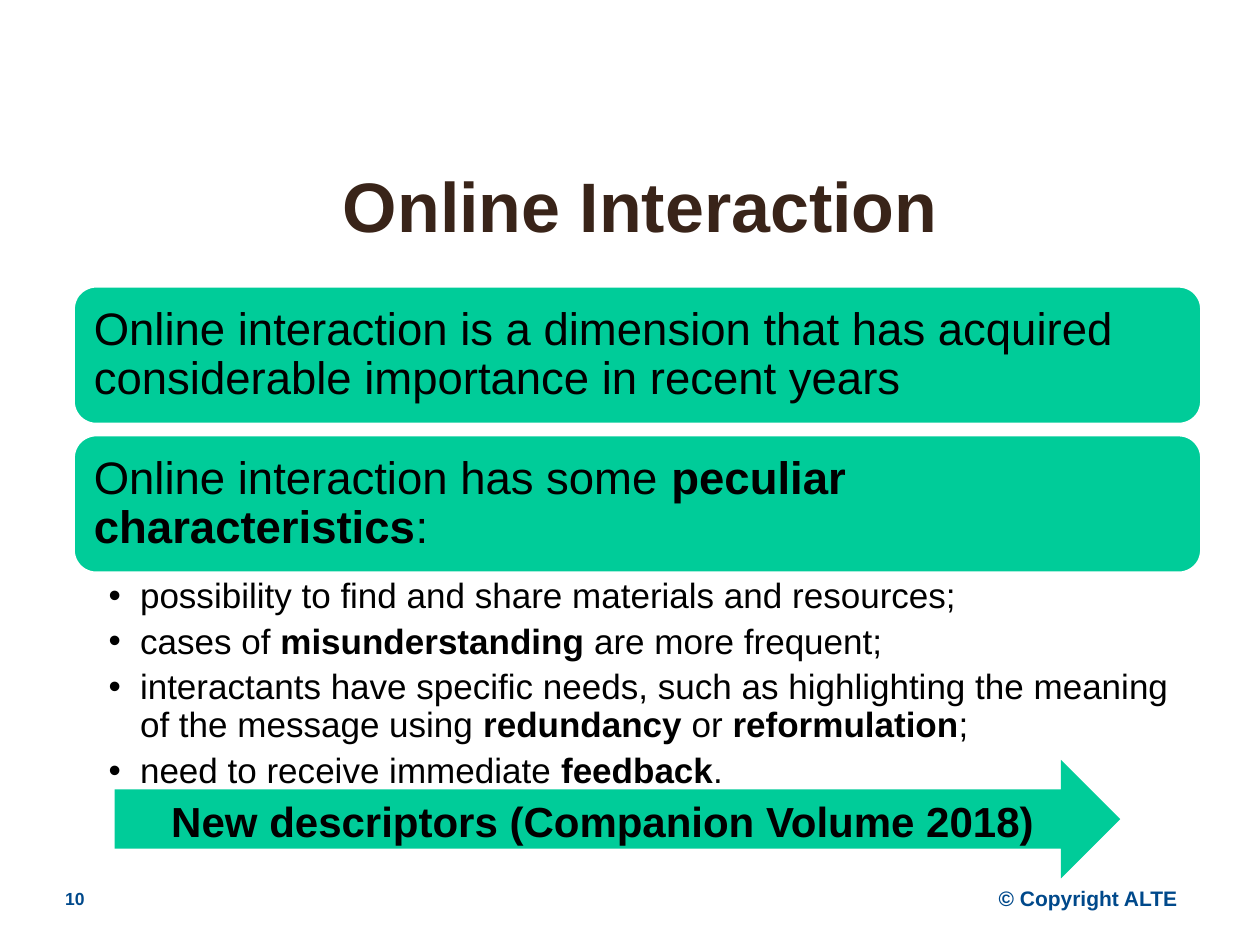
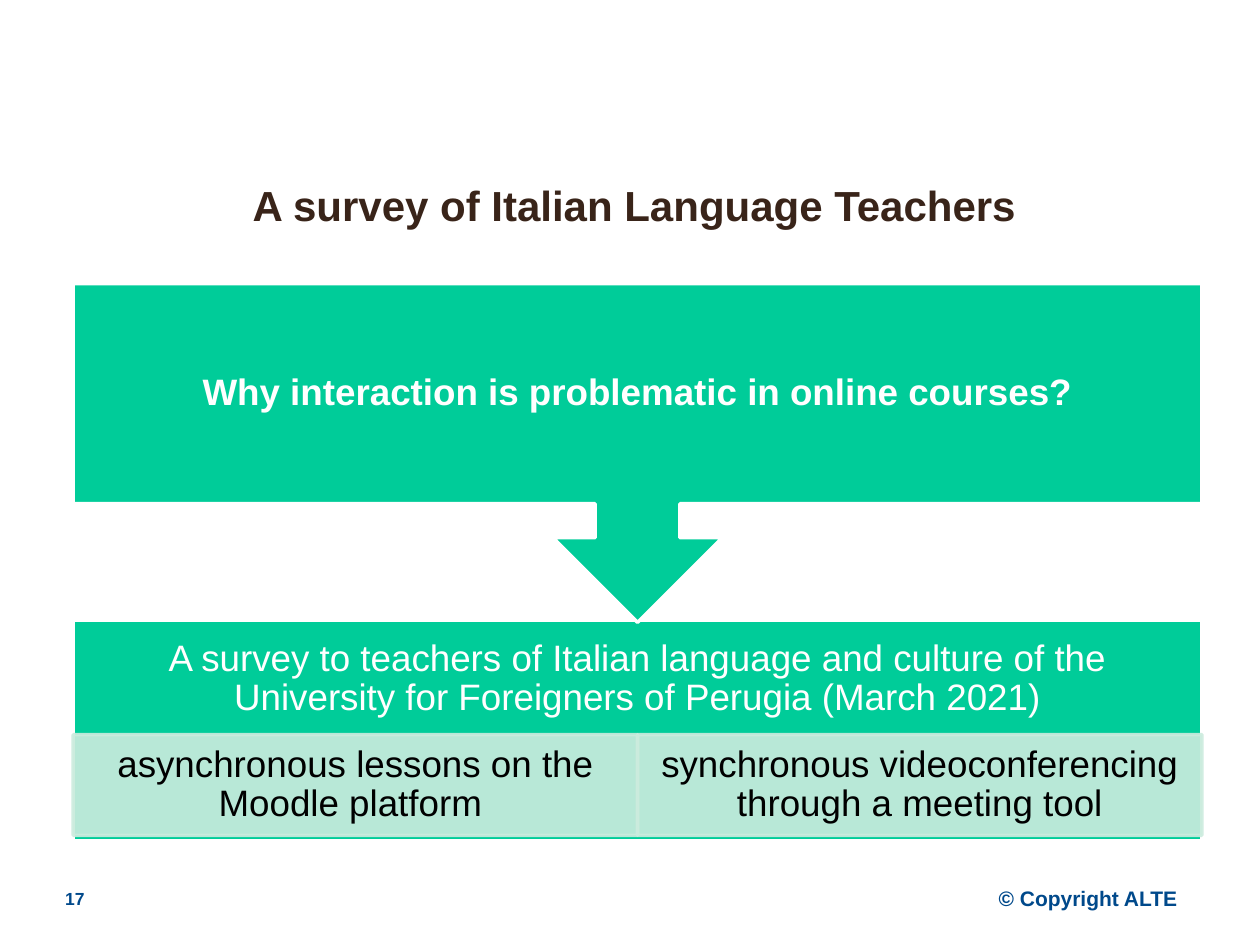
from lxml.etree import SubElement as Sub
from pptx import Presentation
from pptx.dml.color import RGBColor as Rgb
from pptx.enum.shapes import MSO_SHAPE as Kind
from pptx.enum.text import MSO_ANCHOR as Hold, MSO_AUTO_SIZE as Fit, PP_ALIGN as Side
from pptx.oxml.ns import qn
from pptx.util import Pt

GREEN, PALE, WHITE = "00CC99", "CCECDE", "FFFFFF"
BLACK, BROWN, BLUE = "000000", "392419", "00498B"
LEFT, WIDE = 41.8, 645


def paint(part, tone):
    part.rgb = Rgb.from_string(tone)


def apply(item, form):
    for name, value in form.items():
        setattr(item, name, value)


def pad(frame, left, top, right, base):
    names = ("margin_left", "margin_top", "margin_right", "margin_bottom")
    apply(frame, dict(zip(names, map(Pt, (left, top, right, base)))))


def place(shape, area):
    apply(shape, dict(zip(("left", "top", "width", "height"), map(Pt, area))))


def write(para, text, size, tone, bold=False, **form):
    apply(para, form)
    for turn, part in enumerate(text.split("|")):
        if part:
            run = para.add_run()
            run.text = part
            apply(run.font, {"name": "Arial", "size": Pt(size), "bold": bold or turn % 2 == 1})
            paint(run.font.color, tone)


def fill_text(shape, text, size, tone, pads=(7.2, 3.6, 7.2, 3.6), hold=Hold.MIDDLE,
              wrap=True, **form):
    frame = shape.text_frame
    apply(frame, {"word_wrap": wrap, "auto_size": Fit.NONE, "vertical_anchor": hold})
    pad(frame, *pads)
    write(frame.paragraphs[0], text, size, tone, **form)


def add_note(slide, area, text, size, tone, **form):
    box = slide.shapes.add_textbox(*map(Pt, area))
    fill_text(box, text, size, tone, **form)


def add_block(slide, kind, area, tone=GREEN, edge=WHITE):
    block = slide.shapes.add_shape(kind, *map(Pt, area))
    block.shadow.inherit = False
    block.fill.solid()
    paint(block.fill.fore_color, tone)
    if edge:
        block.line.width = Pt(2)
        paint(block.line.color, edge)
    else:
        block.line.fill.background()
    return block


def fade(block, share):
    for tint in block._element.spPr.iter(qn("a:srgbClr")):
        Sub(tint, qn("a:alpha"), val=str(share * 1000))


def add_list(slide, area, lines):
    body = slide.placeholders[1]
    place(body, area)
    frame = body.text_frame
    apply(frame, {"word_wrap": True, "auto_size": Fit.NONE, "vertical_anchor": Hold.TOP})
    pad(frame, 20.2, 2.9, 14.4, 2.9)
    for turn, line in enumerate(lines):
        para = frame.add_paragraph() if turn else frame.paragraphs[0]
        props = para._p.get_or_add_pPr()
        apply_indent = {"marL": Pt(18), "indent": -Pt(18)}
        for name, value in apply_indent.items():
            props.set(name, str(value))
        Sub(props, qn("a:buFont"), typeface="Arial")
        Sub(props, qn("a:buChar"), char="•")
        write(para, line, 20, BLACK, level=1, alignment=Side.LEFT, line_spacing=0.9,
              space_before=Pt(0), space_after=Pt(4.5))


def start(deck, layout, title, size, page):
    slide = deck.slides.add_slide(deck.slide_layouts[layout])
    head = slide.shapes.title
    place(head, (LEFT, 77.8, 648, 77.8))
    fill_text(head, title, size, BROWN, bold=True, alignment=Side.CENTER)
    add_note(slide, (30.2, 504, 48.2, 19.4), page, 10, BLUE, bold=True, hold=Hold.TOP)
    add_note(slide, (560.9, 502.6, 121.7, 21.6), "© Copyright ALTE", 12, BLUE, bold=True,
             hold=Hold.TOP, wrap=False, alignment=Side.CENTER)
    return slide


def add_online(deck):
    slide = start(deck, 1, "Online Interaction", 40, "10")
    claims = (
        "Online interaction is a dimension that has acquired considerable importance in recent years",
        "Online interaction has some |peculiar characteristics|:",
    )
    for row, claim in enumerate(claims):
        block = add_block(slide, Kind.ROUNDED_RECTANGLE, (LEFT, 163.4 + 85 * row, WIDE, 79.2))
        fill_text(block, claim, 26, BLACK, pads=(8, 8, 8, 8),
                  alignment=Side.LEFT, line_spacing=0.9)
    add_list(slide, (LEFT, 327.6, WIDE, 123), (
        "possibility to find and share materials and resources;",
        "cases of |misunderstanding| are more frequent;",
        "interactants have specific needs, such as highlighting the meaning of the message "
        "using |redundancy| or |reformulation|;",
        "need to receive immediate |feedback|.",
    ))
    arrow = add_block(slide, Kind.RIGHT_ARROW, (65.5, 434.2, 574.6, 67.7), edge=None)
    fill_text(arrow, "New descriptors (Companion Volume 2018)", 24, BLACK, bold=True,
              hold=Hold.TOP, alignment=Side.CENTER)


def add_survey(deck):
    slide = start(deck, 5, "A survey of Italian Language Teachers ", 24, "17")
    form = {"alignment": Side.CENTER, "line_spacing": 0.9}
    base = add_block(slide, Kind.RECTANGLE, (LEFT, 354.2, WIDE, 126))
    fill_text(base, "A survey to teachers of Italian language and culture of the University "
              "for Foreigners of Perugia (March 2021)", 21, WHITE,
              pads=(11.5, 11.5, 11.5, 69.8), **form)
    modes = (
        "asynchronous lessons on the Moodle platform ",
        "synchronous videoconferencing through a meeting tool",
    )
    half = WIDE / len(modes)
    for col, mode in enumerate(modes):
        cell = add_block(slide, Kind.RECTANGLE, (LEFT + half * col, 419.8, half, 57.6), PALE, PALE)
        fade(cell, 90)
        fill_text(cell, mode, 21, BLACK, pads=(11.5, 2.2, 11.5, 2.2), **form)
    call = add_block(slide, Kind.UP_ARROW_CALLOUT, (LEFT, 162, WIDE, 193.7))
    call.rotation = 180
    add_note(slide, (LEFT, 162, WIDE, 126), "Why interaction is problematic in online courses?",
             21, WHITE, bold=True, pads=(11.5,) * 4, **form)


def main():
    deck = Presentation()
    apply(deck, {"slide_width": Pt(720), "slide_height": Pt(540)})
    add_online(deck)
    add_survey(deck)
    deck.save("out.pptx")


if __name__ == "__main__":
    main()
